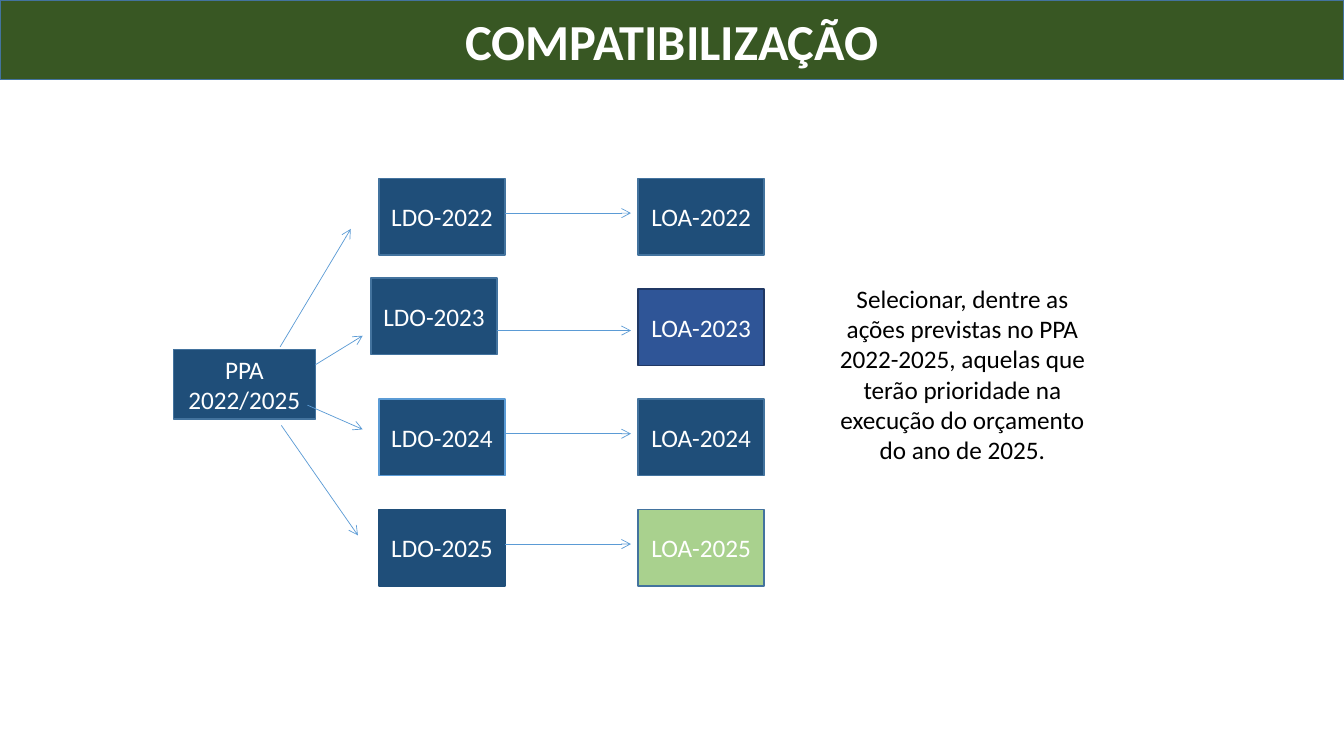
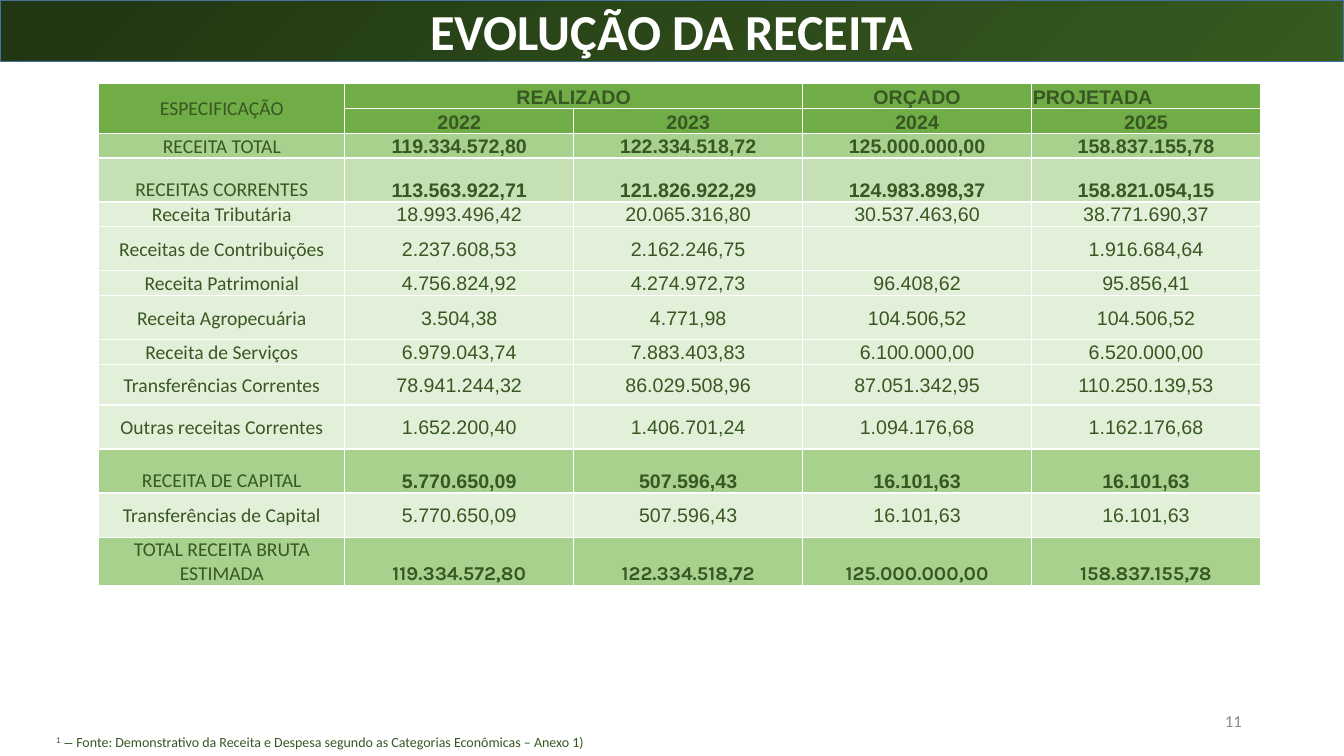
from lxml import etree
from pptx import Presentation
from pptx import util as u
from pptx.dml.color import RGBColor
from pptx.enum import shapes, text
from pptx.oxml.ns import qn

GREEN, WHITE, BLACK = "385723", "FFFFFF", "000000"
NAVY, EDGE, SKY = "1F4E79", "43739E", "5B9BD5"
HEAD, BAND, SOFT, PALE = "70AD47", "A9D18E", "C5E0B4", "E2F0D9"
SLIDE_W, SLIDE_H = 33.87, 19.05
CENTER, LEFT, RIGHT = text.PP_ALIGN.CENTER, text.PP_ALIGN.LEFT, text.PP_ALIGN.RIGHT
MIDDLE, BOTTOM = text.MSO_ANCHOR.MIDDLE, text.MSO_ANCHOR.BOTTOM

BOX_W, BOX_H = 3.18, 1.93
FIRST_Y, STEP_Y = 4.5, 2.78
LOA_X, ARROW_END = 16.08, 15.9
YEARS = [
    # year, LDO x, LDO y shift, arrow drop, LDO line, LOA fill, LOA line
]
YEARS = [
    (2022, 9.55, 0, 0.87, EDGE, NAVY, EDGE),
    (2023, 9.35, -0.27, 1.32, EDGE, "2F5597", "203864"),
    (2024, 9.55, 0, 0.87, SKY, NAVY, EDGE),
    (2025, 9.55, 0, 0.87, NAVY, BAND, EDGE),
]
PPA_ARROWS = [
    (7.06, 8.74, 8.84, 5.77),
    (7.95, 9.19, 9.14, 8.46),
    (7.75, 10.21, 9.14, 10.82),
    (7.09, 10.72, 9.02, 13.49),
]

COL_WIDTHS = [6.2] + [5.77] * 4
SHORT, MEDIUM, TALL = 0.6, 1.02, 1.11
HEADER = [
    ["ESPECIFICAÇÃO", "REALIZADO", "", "ORÇADO", "PROJETADA"],
    ["", "2022", "2023", "2024", "2025"],
]
REVENUE = [
    (SHORT, BAND, "RECEITA TOTAL",
     "119.334.572,80", "122.334.518,72", "125.000.000,00", "158.837.155,78"),
    (TALL, SOFT, "RECEITAS CORRENTES",
     "113.563.922,71", "121.826.922,29", "124.983.898,37", "158.821.054,15"),
    (SHORT, PALE, "Receita Tributária",
     "18.993.496,42", "20.065.316,80", "30.537.463,60", "38.771.690,37"),
    (TALL, PALE, "Receitas de Contribuições",
     "2.237.608,53", "2.162.246,75", "", "1.916.684,64"),
    (SHORT, PALE, "Receita Patrimonial",
     "4.756.824,92", "4.274.972,73", "96.408,62", "95.856,41"),
    (TALL, PALE, "Receita Agropecuária",
     "3.504,38", "4.771,98", "104.506,52", "104.506,52"),
    (SHORT, PALE, "Receita de Serviços",
     "6.979.043,74", "7.883.403,83", "6.100.000,00", "6.520.000,00"),
    (MEDIUM, PALE, "Transferências Correntes",
     "78.941.244,32", "86.029.508,96", "87.051.342,95", "110.250.139,53"),
    (TALL, PALE, "Outras receitas Correntes",
     "1.652.200,40", "1.406.701,24", "1.094.176,68", "1.162.176,68"),
    (TALL, BAND, "RECEITA DE CAPITAL",
     "5.770.650,09", "507.596,43", "16.101,63", "16.101,63"),
    (TALL, PALE, "Transferências de Capital",
     "5.770.650,09", "507.596,43", "16.101,63", "16.101,63"),
    (TALL, BAND, "TOTAL RECEITA BRUTA ESTIMADA",
     "119.334.572,80", "122.334.518,72", "125.000.000,00", "158.837.155,78"),
]


def rgb(value):
    return RGBColor.from_string(value)


def add_run(p, content, size=18, font="Calibri", color=BLACK, bold=False, baseline=0):
    r = p.add_run()
    r.text = content
    r.font.size = u.Pt(size)
    r.font.name = font
    r.font.bold = bold
    r.font.color.rgb = rgb(color)
    if baseline:
        r._r.get_or_add_rPr().set("baseline", str(baseline * 1000))


def write(tf, content, align=CENTER, **fmt):
    for i, line in enumerate(content.split("\n")):
        p = tf.add_paragraph() if i else tf.paragraphs[0]
        p.alignment = align
        add_run(p, line, **fmt)


def outline(sp, color, width=1):
    sp.line.color.rgb = rgb(color)
    sp.line.width = u.Pt(width)


def add_title_slide(prs, title, height, gradient=None):
    s = prs.slides.add_slide(prs.slide_layouts[5])
    sp = s.shapes.title
    sp.left, sp.top, sp.width, sp.height = 0, 0, u.Cm(SLIDE_W), u.Cm(height)
    if gradient:
        sp.fill.gradient()
        sp.fill.gradient_angle = 315
        for stop, color in zip(sp.fill.gradient_stops, gradient):
            stop.color.rgb = rgb(color)
    else:
        sp.fill.solid()
        sp.fill.fore_color.rgb = rgb(GREEN)
    outline(sp, EDGE)
    tf = sp.text_frame
    tf.auto_size = text.MSO_AUTO_SIZE.NONE
    tf.vertical_anchor = MIDDLE
    write(tf, title, size=36, color=WHITE, bold=True)
    return s


def add_box(s, content, x, y, w=BOX_W, h=BOX_H, fill=NAVY, line=EDGE):
    sp = s.shapes.add_shape(shapes.MSO_SHAPE.RECTANGLE, u.Cm(x), u.Cm(y), u.Cm(w), u.Cm(h))
    sp.shadow.inherit = False
    sp.fill.solid()
    sp.fill.fore_color.rgb = rgb(fill)
    outline(sp, line)
    sp.text_frame.vertical_anchor = MIDDLE
    write(sp.text_frame, content, color=WHITE)


def add_arrow(s, x1, y1, x2, y2):
    c = s.shapes.add_connector(
        shapes.MSO_CONNECTOR.STRAIGHT, u.Cm(x1), u.Cm(y1), u.Cm(x2), u.Cm(y2))
    outline(c, SKY, 0.5)
    etree.SubElement(c.line._get_or_add_ln(), qn("a:tailEnd"), type="arrow")
    etree.SubElement(c._element.spPr, qn("a:effectLst"))


def add_text(s, content, x, y, w, h, anchor=text.MSO_ANCHOR.TOP, **fmt):
    tf = s.shapes.add_textbox(u.Cm(x), u.Cm(y), u.Cm(w), u.Cm(h)).text_frame
    tf.word_wrap = True
    tf.vertical_anchor = anchor
    write(tf, content, **fmt)
    return tf


def format_cell(cell, fill, anchor):
    tcPr = cell._tc.get_or_add_tcPr()
    for side in ("lnL", "lnR", "lnT", "lnB"):
        ln = etree.SubElement(tcPr, qn("a:" + side), w=str(u.Pt(1)))
        solid = etree.SubElement(ln, qn("a:solidFill"))
        etree.SubElement(solid, qn("a:srgbClr"), val=WHITE)
    cell.fill.solid()
    cell.fill.fore_color.rgb = rgb(fill)
    cell.vertical_anchor = anchor
    cell.margin_left = cell.margin_right = cell.margin_top = u.Cm(0.03)
    cell.margin_bottom = 0


def add_revenue_table(s, x, y):
    rows = [(SHORT, HEAD, *labels) for labels in HEADER] + REVENUE
    frame = s.shapes.add_table(
        len(rows), len(COL_WIDTHS), u.Cm(x), u.Cm(y),
        u.Cm(sum(COL_WIDTHS)), u.Cm(sum(row[0] for row in rows)))
    table = frame.table
    table.first_row = table.horz_banding = False
    for col, width in zip(table.columns, COL_WIDTHS):
        col.width = u.Cm(width)
    for i, (height, fill, *labels) in enumerate(rows):
        table.rows[i].height = u.Cm(height)
        strong = fill != PALE
        number_font = "Karla" if i == len(rows) - 1 else "Arial"
        for j, label in enumerate(labels):
            cell = table.cell(i, j)
            corner = i == j == 0
            format_cell(cell, fill, BOTTOM if strong and not corner else MIDDLE)
            if label:
                write(cell.text_frame, label, size=14, color=GREEN,
                      font=number_font if j else "Calibri", bold=strong and j > 0,
                      align=LEFT if label == "PROJETADA" else CENTER)
    table.cell(0, 0).merge(table.cell(1, 0))
    table.cell(0, 1).merge(table.cell(0, 2))


def build_compatibility(prs):
    s = add_title_slide(prs, "COMPATIBILIZAÇÃO", 2.01)
    add_box(s, "PPA\n2022/2025", 4.37, 8.81, 3.58, 1.75)
    for ends in PPA_ARROWS:
        add_arrow(s, *ends)
    for i, (year, x, shift, drop, ldo_line, loa_fill, loa_line) in enumerate(YEARS):
        y = FIRST_Y + i * STEP_Y
        add_box(s, f"LDO-{year}", x, y + shift, line=ldo_line)
        add_box(s, f"LOA-{year}", LOA_X, y, fill=loa_fill, line=loa_line)
        arrow_y = y + shift + drop
        add_arrow(s, x + BOX_W, arrow_y, ARROW_END, arrow_y)
    add_text(s, "Selecionar, dentre as ações previstas no PPA 2022-2025, aquelas que "
             "terão prioridade na execução do orçamento do ano de 2025.",
             20.75, 7.01, 7.01, 4.88)


def build_revenue(prs):
    s = add_title_slide(prs, "EVOLUÇÃO DA RECEITA", 1.55, ("213613", "375A20"))
    add_text(s, "11", 23.93, 17.65, 7.62, 1.02, anchor=MIDDLE, align=RIGHT,
             size=12, color="8C8C8C")
    note = {"size": 10, "color": GREEN}
    tf = add_text(s, "1", 1.17, 18.36, 29.16, 0.69, align=LEFT,
                  font="Arial", baseline=30, **note)
    p = tf.paragraphs[0]
    add_run(p, " – ", font="Arial", **note)
    add_run(p, "Fonte: Demonstrativo da Receita e Despesa segundo as "
            "Categorias Econômicas – Anexo 1)", **note)
    add_revenue_table(s, 2.49, 2.11)


def main():
    prs = Presentation()
    prs.slide_width, prs.slide_height = u.Cm(SLIDE_W), u.Cm(SLIDE_H)
    build_compatibility(prs)
    build_revenue(prs)
    prs.save("out.pptx")


if __name__ == "__main__":
    main()
